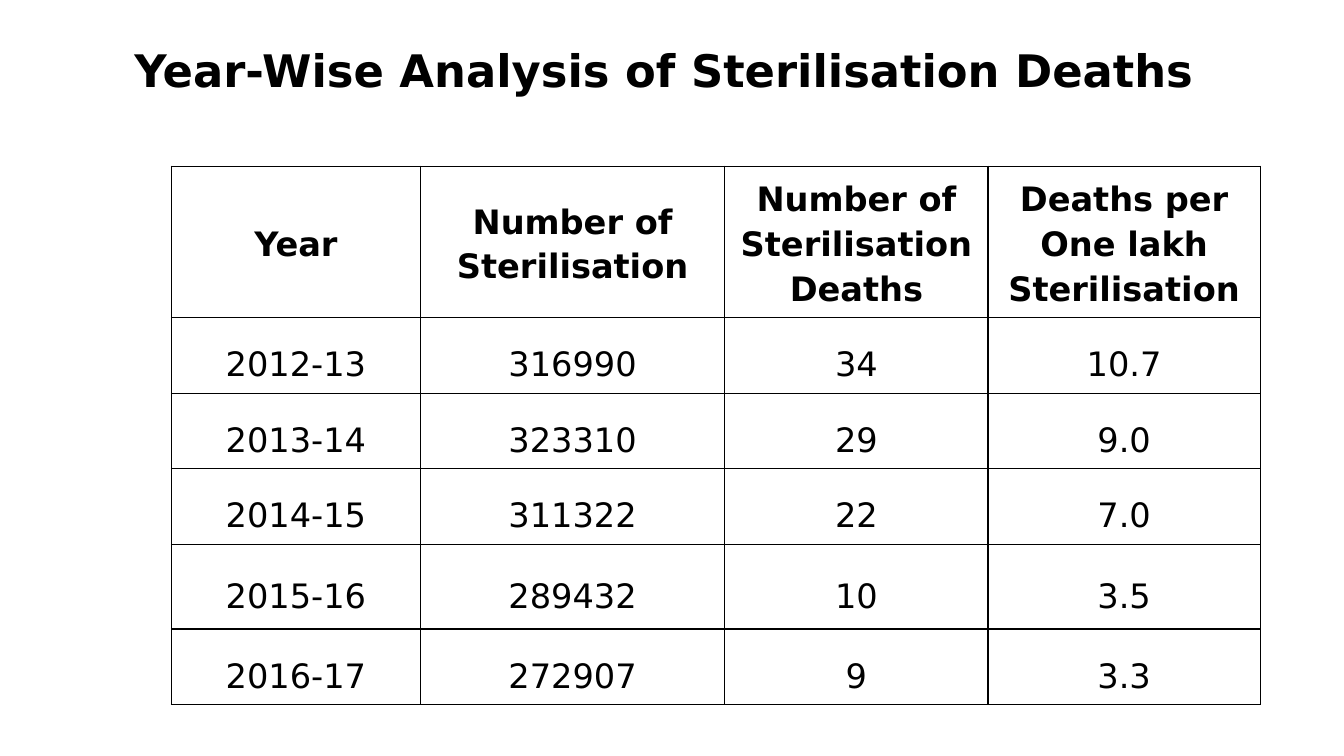
import pptx
import pptx.dml.color
import pptx.enum.text
import pptx.oxml
import pptx.oxml.ns
import pptx.util

TITLE = "Year-Wise Analysis of Sterilisation Deaths"
HEADER = ("Year", "Number of Sterilisation", "Number of Sterilisation Deaths",
          "Deaths per One lakh Sterilisation")
RECORDS = [
    ("2012-13", "316990", "34", "10.7"),
    ("2013-14", "323310", "29", "9.0"),
    ("2014-15", "311322", "22", "7.0"),
    ("2015-16", "289432", "10", "3.5"),
    ("2016-17", "272907", "9", "3.3"),
]

SLIDE_SIZE = (13.33, 7.5)
TITLE_BOX = (0, 0.32, 13.18, 0.75)
TABLE_CORNER = (1.7, 1.65)
COLUMN_WIDTHS = (2.47, 3.02, 2.61, 2.7)
ROW_HEIGHTS = (1.5, 0.75, 0.75, 0.75, 0.84, 0.75)
CELL_MARGIN = 0.07
FONT = "DejaVu Sans"
BLACK = pptx.dml.color.RGBColor(0, 0, 0)
Inches = pptx.util.Inches
MIDDLE = pptx.enum.text.MSO_ANCHOR.MIDDLE


def write(frame, text, size, bold, spacing):
    para = frame.paragraphs[0]
    para.alignment = pptx.enum.text.PP_ALIGN.CENTER
    para.line_spacing = spacing
    span = para.add_run()
    span.text = text
    span.font.name = FONT
    span.font.size = pptx.util.Pt(size)
    span.font.bold = bold
    span.font.color.rgb = BLACK


def add_borders(cell):
    """Draw a one-point line on all four sides; call before setting any fill."""
    for side in ("lnL", "lnR", "lnT", "lnB"):
        cell._tc.get_or_add_tcPr().append(pptx.oxml.parse_xml(
            f'<a:{side} {pptx.oxml.ns.nsdecls("a")} w="{pptx.util.Pt(1)}">'
            f'<a:solidFill><a:srgbClr val="{BLACK}"/></a:solidFill></a:{side}>'))


def add_title(page):
    box = page.shapes.add_textbox(*map(Inches, TITLE_BOX))
    box.text_frame.word_wrap = True
    box.text_frame.vertical_anchor = MIDDLE
    write(box.text_frame, TITLE, 32, True, 1.0)


def add_deaths_table(page):
    rows = [HEADER, *RECORDS]
    extent = (sum(COLUMN_WIDTHS), sum(ROW_HEIGHTS))
    table = page.shapes.add_table(len(rows), len(HEADER),
                                  *map(Inches, TABLE_CORNER + extent)).table
    table.horz_banding = False
    table.first_row = False
    for column, width in zip(table.columns, COLUMN_WIDTHS):
        column.width = Inches(width)
    for index, (row, height) in enumerate(zip(table.rows, ROW_HEIGHTS)):
        row.height = Inches(height)
        is_header = index == 0
        for cell, text in zip(row.cells, rows[index]):
            add_borders(cell)
            cell.fill.background()
            cell.vertical_anchor = MIDDLE
            cell.margin_left = cell.margin_right = Inches(CELL_MARGIN)
            cell.margin_top = cell.margin_bottom = 0
            write(cell.text_frame, text, 24, is_header, 1.15 if is_header else 1.5)


def main():
    deck = pptx.Presentation()
    deck.slide_width, deck.slide_height = map(Inches, SLIDE_SIZE)
    page = deck.slides.add_slide(deck.slide_layouts[6])
    add_deaths_table(page)
    add_title(page)
    deck.save("out.pptx")


if __name__ == "__main__":
    main()
